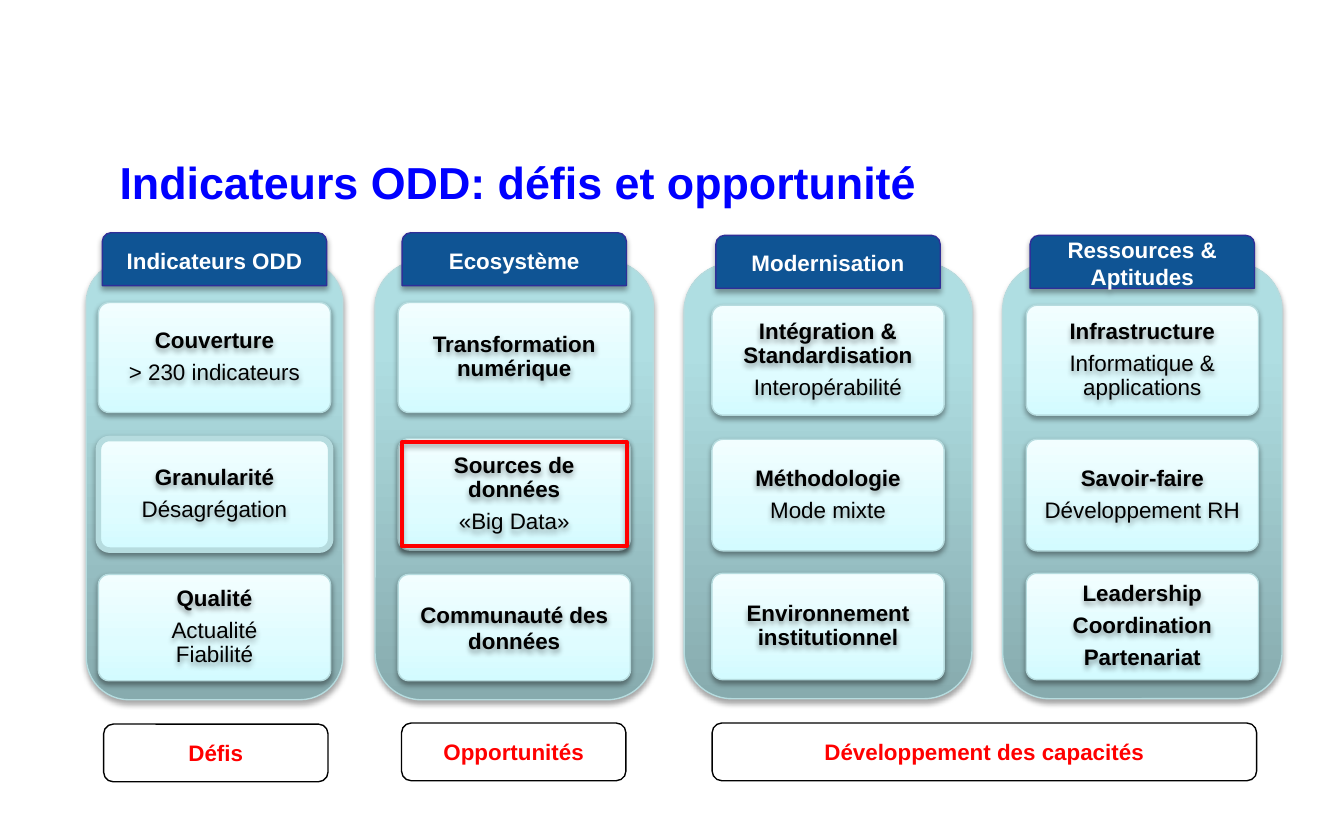
from copy import deepcopy
from dataclasses import dataclass

from pptx import Presentation
from pptx.dml.color import RGBColor
from pptx.enum.shapes import MSO_SHAPE as Preset
from pptx.enum.text import MSO_ANCHOR as Anchor, PP_ALIGN as Align
from pptx.oxml import parse_xml
from pptx.oxml.ns import nsdecls, qn
from pptx.util import Cm, Pt

PANEL_STOPS = [(0, "87ABAE"), (0.8, "AFDEE2"), (1, "AFE0E4")]
CARD_STOPS = [(0, "D3FBFF"), (0.35, "DFFCFF"), (1, "F2FEFF")]
PALE_EDGE = "B6DCDF"
HEADER_WIDTH, HEADER_HEIGHT, HEADER_RISE = 4.24, 1.0, 0.53
CARD_WIDTH, CARD_HEIGHTS, CARD_INSET = 4.39, (2.08, 2.11, 2.01), 0.07
FIRST_CARD_OFFSET, LAST_CARD_OFFSET = 0.79, 2.37


@dataclass
class Card:
    """Wording and finish of one card."""
    bold: tuple
    plain: tuple = ()
    outline: float = 0.75
    spaced: bool = True
    framed: bool = False


COLUMNS = [
    ((1.63, 4.93, 4.85, 8.3), ("Indicateurs ODD",), [
        Card(("Couverture",), ("> 230 indicateurs",)),
        Card(("Granularité",), ("Désagrégation",), outline=3),
        Card(("Qualité",), ("Actualité\nFiabilité",))]),
    ((7.09, 4.93, 5.26, 8.3), ("Ecosystème",), [
        Card(("Transformation numérique",)),
        Card(("Sources de données",), ("«Big Data»",), framed=True),
        Card(("Communauté des données",), spaced=False)]),
    ((12.93, 4.98, 5.44, 8.23), ("Modernisation",), [
        Card(("Intégration & Standardisation",), ("Interopérabilité",)),
        Card(("Méthodologie",), ("Mode mixte",)),
        Card(("Environnement institutionnel",))]),
    ((18.95, 4.98, 5.28, 8.23), ("Ressources &", "Aptitudes"), [
        Card(("Infrastructure",), ("Informatique & applications",)),
        Card(("Savoir-faire",), ("Développement RH",)),
        Card(("Leadership", "Coordination", "Partenariat"))]),
]
CONCLUSIONS = [
    ((1.96, 13.69, 4.24, 1.09), "Défis"),
    ((7.59, 13.67, 4.24, 1.09), "Opportunités"),
    ((13.46, 13.67, 10.29, 1.09), "Développement des capacités"),
]


def color(value):
    """Turn a hex string into a colour."""
    return RGBColor.from_string(value)


def add_shadow(shape, opacity, distance):
    """Give a shape a soft shadow falling downwards."""
    shape.shadow.inherit = False
    shape.element.spPr.find(qn("a:effectLst")).append(parse_xml(
        f'<a:outerShdw {nsdecls("a")} blurRad="{Pt(3.1)}" dist="{Pt(distance)}"'
        ' dir="5400000" rotWithShape="0"><a:srgbClr val="000000">'
        f'<a:alpha val="{opacity * 1000}"/></a:srgbClr></a:outerShdw>'))


def fill_gradient(shape, stops):
    """Fill a shape with a three-stop gradient running upwards."""
    shape.fill.gradient()
    shape.fill.gradient_angle = 90
    stop_list = shape.element.spPr.find(".//" + qn("a:gsLst"))
    stop_list.append(deepcopy(stop_list[-1]))
    for stop, (position, value) in zip(shape.fill.gradient_stops, stops):
        stop.position = position
        stop.color.rgb = color(value)


def add_box(shapes, preset, box, fill, edge, width=0.75):
    """Add an outlined shape with a solid, gradient or empty fill."""
    shape = shapes.add_shape(preset, *map(Cm, box))
    shape.shadow.inherit = False
    if fill is None:
        shape.fill.background()
    elif isinstance(fill, str):
        shape.fill.solid()
        shape.fill.fore_color.rgb = color(fill)
    else:
        fill_gradient(shape, fill)
    shape.line.color.rgb = color(edge)
    shape.line.width = Pt(width)
    return shape


def write(shape, lines, value, size=12, align=Align.CENTER, bold_count=None):
    """Write one paragraph per line, the first bold_count of them bold."""
    text_frame = shape.text_frame
    text_frame.word_wrap = True
    text_frame.vertical_anchor = Anchor.MIDDLE
    text_frame.text = "\n".join(line.replace("\n", "\v") for line in lines)
    for index, paragraph in enumerate(text_frame.paragraphs):
        paragraph.alignment = align
        for run in paragraph.runs:
            run.font.name = "Arial"
            run.font.size = Pt(size)
            run.font.bold = bold_count is None or index < bold_count
            run.font.color.rgb = color(value)


def add_title(slide, box, text):
    """Add the slide title."""
    shape = slide.shapes.add_textbox(*map(Cm, box))
    write(shape, [text], "0000FF", 24, Align.LEFT)
    shape.text_frame.margin_left = Cm(0.76)


def add_card(shapes, box, card):
    """Add one card and the text lying on it."""
    left, top, width, height = box
    shape = add_box(shapes, Preset.ROUNDED_RECTANGLE, box, CARD_STOPS, PALE_EDGE, card.outline)
    shape.adjustments[0] = 0.1
    add_shadow(shape, 38, 1.6)
    inner = (left + CARD_INSET, top + CARD_INSET,
             width - 2 * CARD_INSET, height - 2 * CARD_INSET)
    if card.framed:
        label = add_box(shapes, Preset.RECTANGLE, inner, None, "FF0000", 2.25)
    else:
        label = shapes.add_textbox(*map(Cm, inner))
    add_shadow(label, 38, 1.6)
    write(label, card.bold + card.plain, "000000", bold_count=len(card.bold))
    text_frame = label.text_frame
    text_frame.margin_left = text_frame.margin_right = Cm(0.1)
    text_frame.margin_top = text_frame.margin_bottom = Cm(0.08)
    if card.spaced:
        for paragraph in text_frame.paragraphs:
            paragraph.line_spacing = 0.9
            paragraph.space_after = Pt(4.2)


def add_column(slide, box, heading, cards):
    """Add a panel with its heading tab and its evenly spaced cards."""
    left, top, width, height = box
    center = left + width / 2
    shapes = slide.shapes.add_group_shape().shapes
    panel = add_box(shapes, Preset.ROUNDED_RECTANGLE, box, PANEL_STOPS, PALE_EDGE)
    add_shadow(panel, 35, 1.8)
    header_box = (center - HEADER_WIDTH / 2, top - HEADER_RISE, HEADER_WIDTH, HEADER_HEIGHT)
    header = add_box(shapes, Preset.ROUND_2_SAME_RECTANGLE, header_box, "0F5494", "2F2F98")
    add_shadow(header, 35, 1.8)
    write(header, heading, "FFFFFF")
    pitch = (height - FIRST_CARD_OFFSET - LAST_CARD_OFFSET) / 2
    for row, (card, card_height) in enumerate(zip(cards, CARD_HEIGHTS)):
        card_top = top + FIRST_CARD_OFFSET + row * pitch
        add_card(shapes, (center - CARD_WIDTH / 2, card_top, CARD_WIDTH, card_height), card)


def add_conclusion(slide, box, text):
    """Add a white label that sums up the columns above it."""
    shape = add_box(slide.shapes, Preset.ROUNDED_RECTANGLE, box, "FFFFFF", "000000")
    write(shape, [text], "FF0000")


def main():
    """Build the slide and save it."""
    presentation = Presentation()
    presentation.slide_width, presentation.slide_height = Cm(25.4), Cm(15.88)
    slide = presentation.slides.add_slide(presentation.slide_layouts[6])
    add_title(slide, (1.5, 2.69, 22.86, 1.5), "Indicateurs ODD: défis et opportunité")
    for box, heading, cards in COLUMNS:
        add_column(slide, box, heading, cards)
    for box, text in CONCLUSIONS:
        add_conclusion(slide, box, text)
    presentation.save("out.pptx")


if __name__ == "__main__":
    main()
